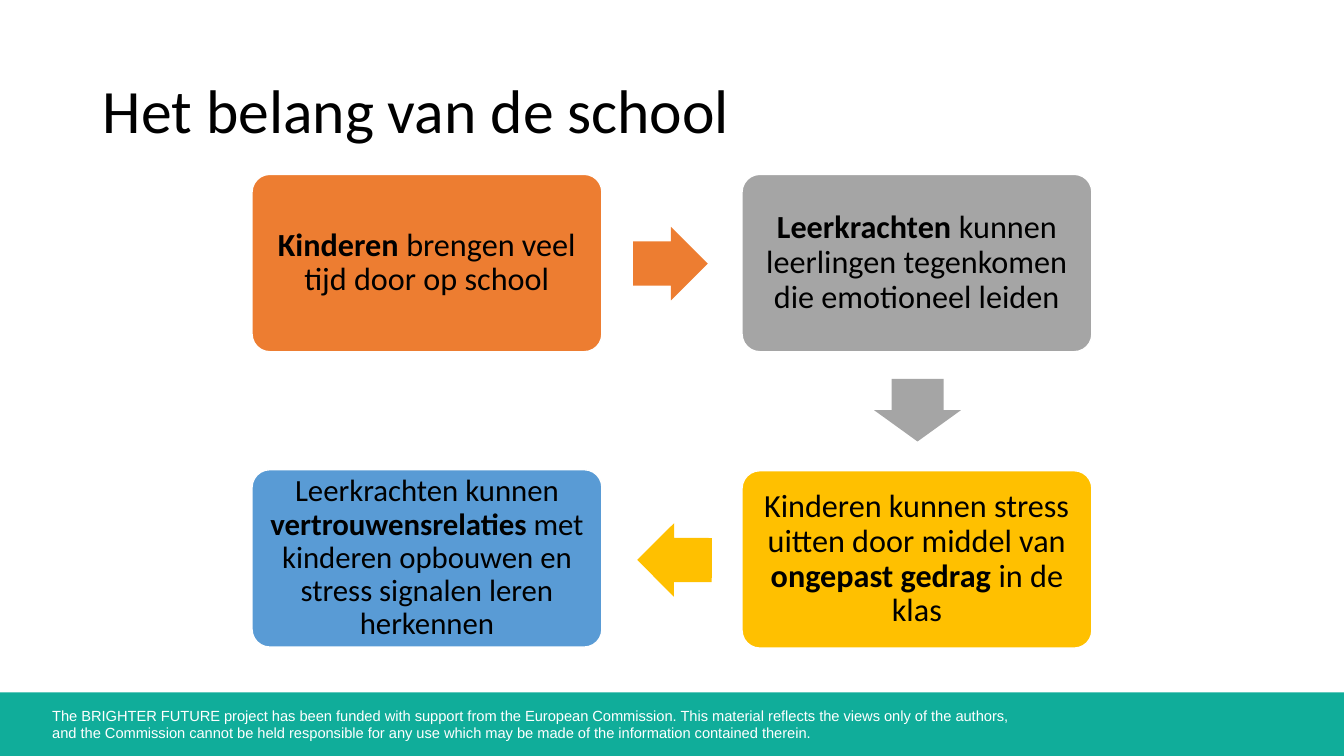
import pptx
import pptx.util
import pptx.dml.color
import pptx.enum.shapes
import pptx.enum.text

Inches = pptx.util.Inches
Pt = pptx.util.Pt
RGBColor = pptx.dml.color.RGBColor
MSO_SHAPE = pptx.enum.shapes.MSO_SHAPE
PP_ALIGN = pptx.enum.text.PP_ALIGN
MSO_ANCHOR = pptx.enum.text.MSO_ANCHOR

TEAL = RGBColor(0x10, 0xAD, 0x9A)
ORANGE = RGBColor(0xED, 0x7D, 0x31)
GRAY = RGBColor(0xA5, 0xA5, 0xA5)
GOLD = RGBColor(0xFF, 0xC0, 0x00)
BLUE = RGBColor(0x59, 0x9B, 0xD5)
WHITE = RGBColor(0xFF, 0xFF, 0xFF)
BLACK = RGBColor(0x00, 0x00, 0x00)

HEADING = "Het belang van de school"
DISCLAIMER = [
    "The BRIGHTER FUTURE project has been funded with support from the European Commission. "
    "This material reflects the views only of the authors, ",
    "and the Commission cannot be held responsible for any use which may be made of the "
    "information contained therein.",
]
LEFT_COLUMN, RIGHT_COLUMN = 2.5, 7.36
STEP_WIDTH, STEP_HEIGHT = 3.47, 1.76
STEPS = [
    (LEFT_COLUMN, 1.73, ORANGE, 23,
     [("Kinderen ", True), ("brengen veel tijd door op school", False)]),
    (RIGHT_COLUMN, 1.73, GRAY, 23,
     [("Leerkrachten ", True),
      ("kunnen leerlingen tegenkomen die emotioneel leiden", False)]),
    (RIGHT_COLUMN, 4.67, GOLD, 23,
     [("Kinderen kunnen stress uitten door middel van ", False),
      ("ongepast gedrag ", True), ("in de klas", False)]),
    (LEFT_COLUMN, 4.66, BLUE, 22,
     [("Leerkrachten kunnen ", False), ("vertrouwensrelaties ", True),
      ("met kinderen opbouwen en stress signalen leren herkennen", False)]),
]
ARROWS = [
    ((6.28, 2.25, 0.74, 0.73), 0, ORANGE),
    ((8.79, 3.64, 0.62, 0.86), 90, GRAY),
    ((6.32, 5.19, 0.74, 0.73), 180.2, GOLD),
]


def add_filled(slide, kind, area, color, adjustments=()):
    shape = slide.shapes.add_shape(kind, *map(Inches, area))
    shape.shadow.inherit = False
    shape.fill.solid()
    shape.fill.fore_color.rgb = color
    shape.line.fill.background()
    for index, value in enumerate(adjustments):
        shape.adjustments[index] = value
    return shape


def add_run(paragraph, text, size, font, color, bold=False):
    run = paragraph.add_run()
    run.text = text
    run.font.size = Pt(size)
    run.font.name = font
    run.font.color.rgb = color
    run.font.bold = bold


def add_footer(slide):
    add_filled(slide, MSO_SHAPE.RECTANGLE, (0, 6.87, 13.33, 0.63), TEAL)
    footer = slide.shapes.add_textbox(*map(Inches, (0.42, 6.96, 10, 0.45)))
    footer.text_frame.word_wrap = True
    paragraph = footer.text_frame.paragraphs[0]
    for index, line in enumerate(DISCLAIMER):
        if index:
            paragraph.add_line_break()
        add_run(paragraph, line, 10.5, "Arial", WHITE)


def add_heading(slide):
    heading = slide.shapes.title
    heading.left, heading.top, heading.width, heading.height = map(
        Inches, (0.92, 0.4, 11.5, 1.45))
    heading.text_frame.vertical_anchor = MSO_ANCHOR.MIDDLE
    paragraph = heading.text_frame.paragraphs[0]
    paragraph.alignment = PP_ALIGN.LEFT
    paragraph.line_spacing = 0.9
    add_run(paragraph, HEADING, 44, "Calibri", BLACK)


def add_step(slide, left, top, color, size, runs):
    step = add_filled(slide, MSO_SHAPE.ROUNDED_RECTANGLE,
                      (left, top, STEP_WIDTH, STEP_HEIGHT), color, (0.1,))
    step.line.color.rgb = WHITE
    step.line.width = Pt(1)
    frame = step.text_frame
    frame.word_wrap = True
    frame.vertical_anchor = MSO_ANCHOR.MIDDLE
    frame.margin_left = frame.margin_right = Inches(0.1)
    frame.margin_top = frame.margin_bottom = 0
    paragraph = frame.paragraphs[0]
    paragraph.alignment = PP_ALIGN.CENTER
    paragraph.line_spacing = 0.9
    for text, bold in runs:
        add_run(paragraph, text, size, "Calibri", BLACK, bold)


def main():
    deck = pptx.Presentation()
    deck.slide_width, deck.slide_height = Inches(13.33), Inches(7.5)
    slide = deck.slides.add_slide(deck.slide_layouts[5])
    add_footer(slide)
    add_heading(slide)
    for step in STEPS:
        add_step(slide, *step)
    for area, rotation, color in ARROWS:
        arrow = add_filled(slide, MSO_SHAPE.RIGHT_ARROW, area, color, (0.6, 0.5))
        arrow.rotation = rotation
    deck.save("out.pptx")


if __name__ == "__main__":
    main()
